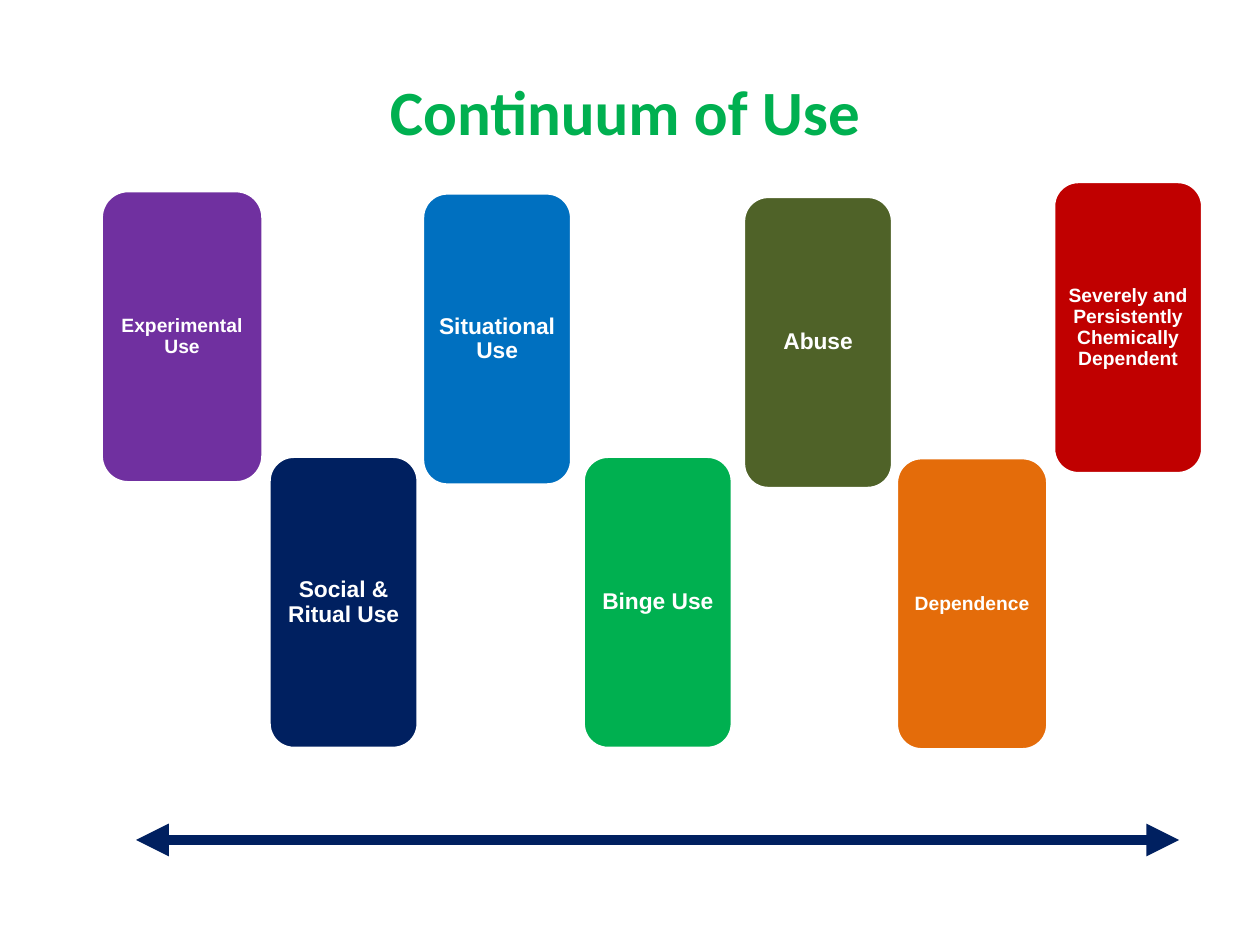
from lxml.etree import SubElement
from pptx import Presentation
from pptx.dml.color import RGBColor
from pptx.enum.shapes import MSO_CONNECTOR, MSO_SHAPE
from pptx.enum.text import MSO_ANCHOR, PP_ALIGN
from pptx.oxml.ns import qn
from pptx.util import Pt

WHITE = RGBColor(0xFF, 0xFF, 0xFF)
PURPLE = RGBColor(0x70, 0x30, 0xA0)
NAVY = RGBColor(0x00, 0x20, 0x60)
BLUE = RGBColor(0x00, 0x70, 0xC0)
GREEN = RGBColor(0x00, 0xB0, 0x50)
OLIVE = RGBColor(0x4F, 0x62, 0x28)
ORANGE = RGBColor(0xE4, 0x6C, 0x0A)
RED = RGBColor(0xC0, 0x00, 0x00)

TITLE = "Continuum of Use"
STAGES = [
    ("Experimental Use", PURPLE, 11, 57.8, 108.9, 92.5),
    ("Social & Ritual Use", NAVY, 13, 153.7, 260.7, 85.3),
    ("Situational Use", BLUE, 13, 241.4, 110.2, 85.3),
    ("Binge Use", GREEN, 13, 333.2, 260.7, 85.3),
    ("Abuse", OLIVE, 13, 424.8, 112.2, 85.3),
    ("Dependence", ORANGE, 11, 512.2, 261.5, 86.6),
    ("Severely and Persistently Chemically Dependent", RED, 11, 602, 103.7, 85.3),
]
STAGE_HEIGHT = 167
STAGE_MARGIN = 4.4
CORNER = 1 / 6
ARROW_LEFT, ARROW_RIGHT, ARROW_TOP = 77.75, 673.75, 480


def write_text(shape, text, *, size, color, font="Arial", line_spacing=1.0, margin=None):
    frame = shape.text_frame
    frame.word_wrap = True
    frame.vertical_anchor = MSO_ANCHOR.MIDDLE
    if margin is not None:
        frame.margin_left = frame.margin_right = Pt(margin)
        frame.margin_top = frame.margin_bottom = Pt(margin)
    paragraph = frame.paragraphs[0]
    paragraph.alignment = PP_ALIGN.CENTER
    paragraph.line_spacing = line_spacing
    run = paragraph.add_run()
    run.text = text
    run.font.name = font
    run.font.size = Pt(size)
    run.font.bold = True
    run.font.color.rgb = color


def add_stage(slide, label, fill, size, left, top, width):
    shape = slide.shapes.add_shape(
        MSO_SHAPE.ROUNDED_RECTANGLE, Pt(left), Pt(top), Pt(width), Pt(STAGE_HEIGHT)
    )
    shape.adjustments[0] = CORNER
    shape.shadow.inherit = False
    shape.fill.solid()
    shape.fill.fore_color.rgb = fill
    shape.line.color.rgb = WHITE
    shape.line.width = Pt(2)
    write_text(shape, label, size=size, color=WHITE, line_spacing=0.9, margin=STAGE_MARGIN)


def add_double_arrow(slide):
    arrow = slide.shapes.add_connector(
        MSO_CONNECTOR.STRAIGHT, Pt(ARROW_LEFT), Pt(ARROW_TOP), Pt(ARROW_RIGHT), Pt(ARROW_TOP)
    )
    arrow.line.color.rgb = NAVY
    arrow.line.width = Pt(6.25)
    line = arrow.line._get_or_add_ln()
    for end in ("a:headEnd", "a:tailEnd"):
        SubElement(line, qn(end), type="triangle")
    SubElement(arrow._element.spPr, qn("a:effectLst"))


def main():
    presentation = Presentation()
    presentation.slide_width = Pt(720)
    presentation.slide_height = Pt(540)
    slide = presentation.slides.add_slide(presentation.slide_layouts[6])
    for stage in STAGES:
        add_stage(slide, *stage)
    title = slide.shapes.add_textbox(Pt(48.2), Pt(18), Pt(618), Pt(90))
    write_text(title, TITLE, size=36, color=GREEN, font="Calibri")
    add_double_arrow(slide)
    presentation.save("out.pptx")


if __name__ == "__main__":
    main()
